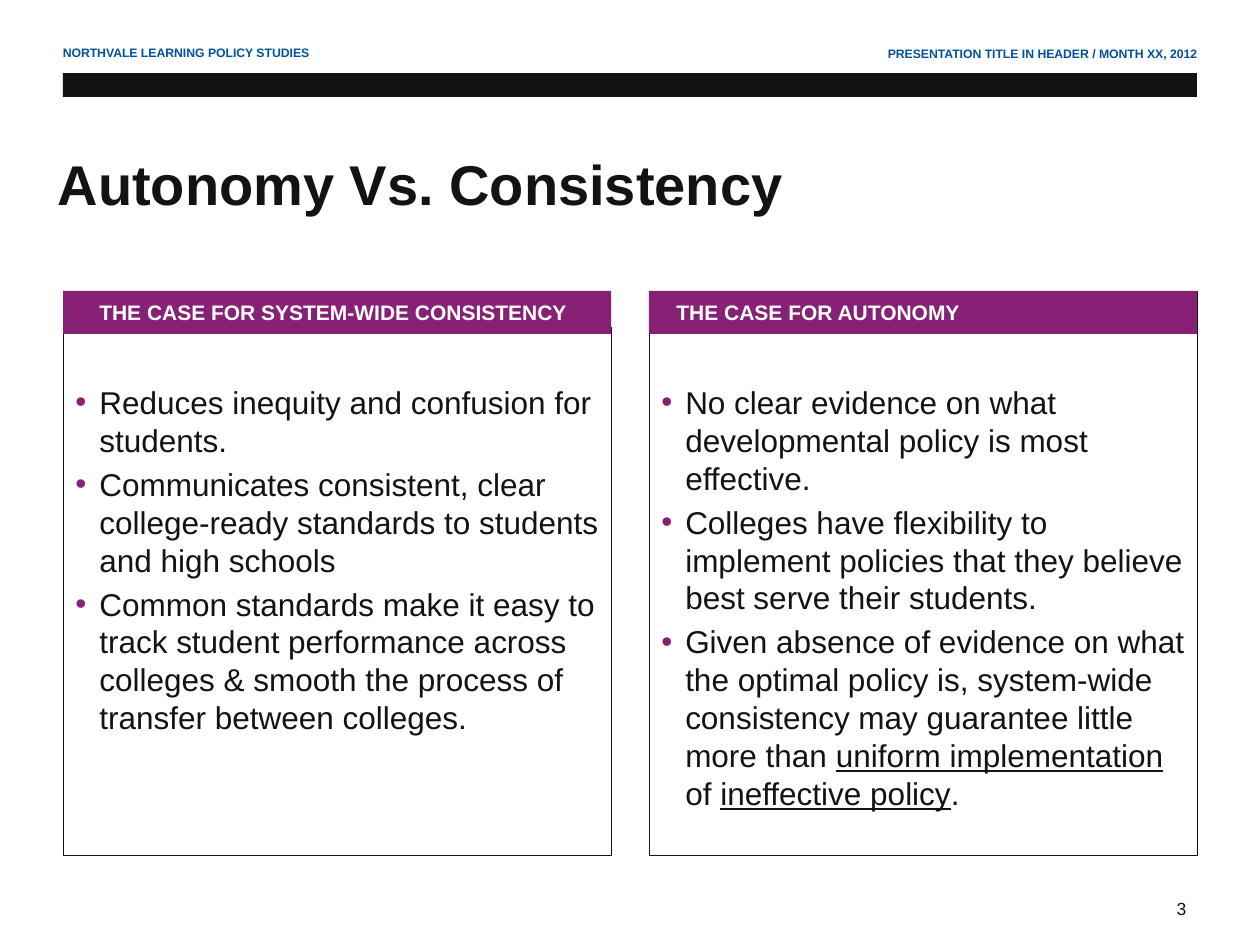
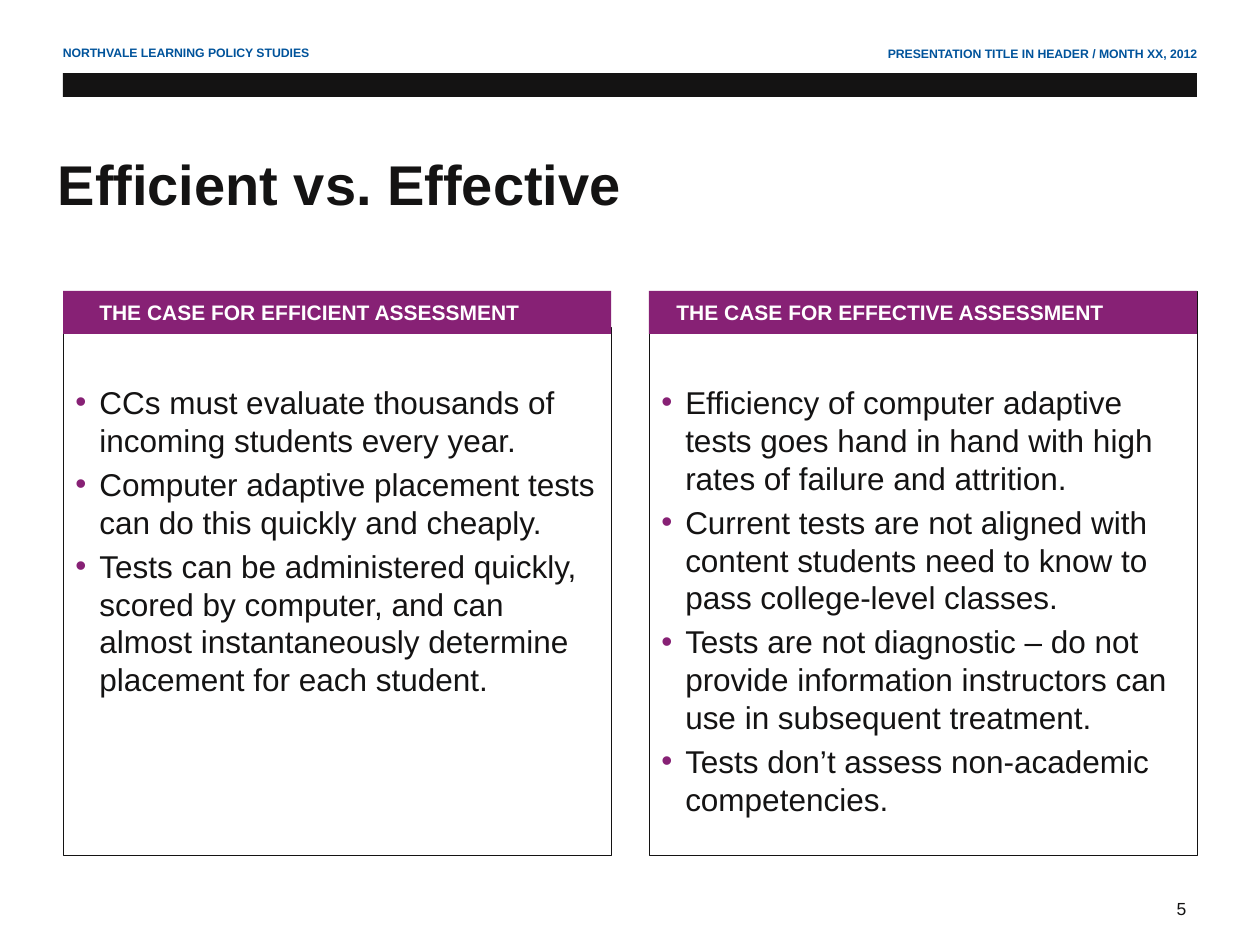
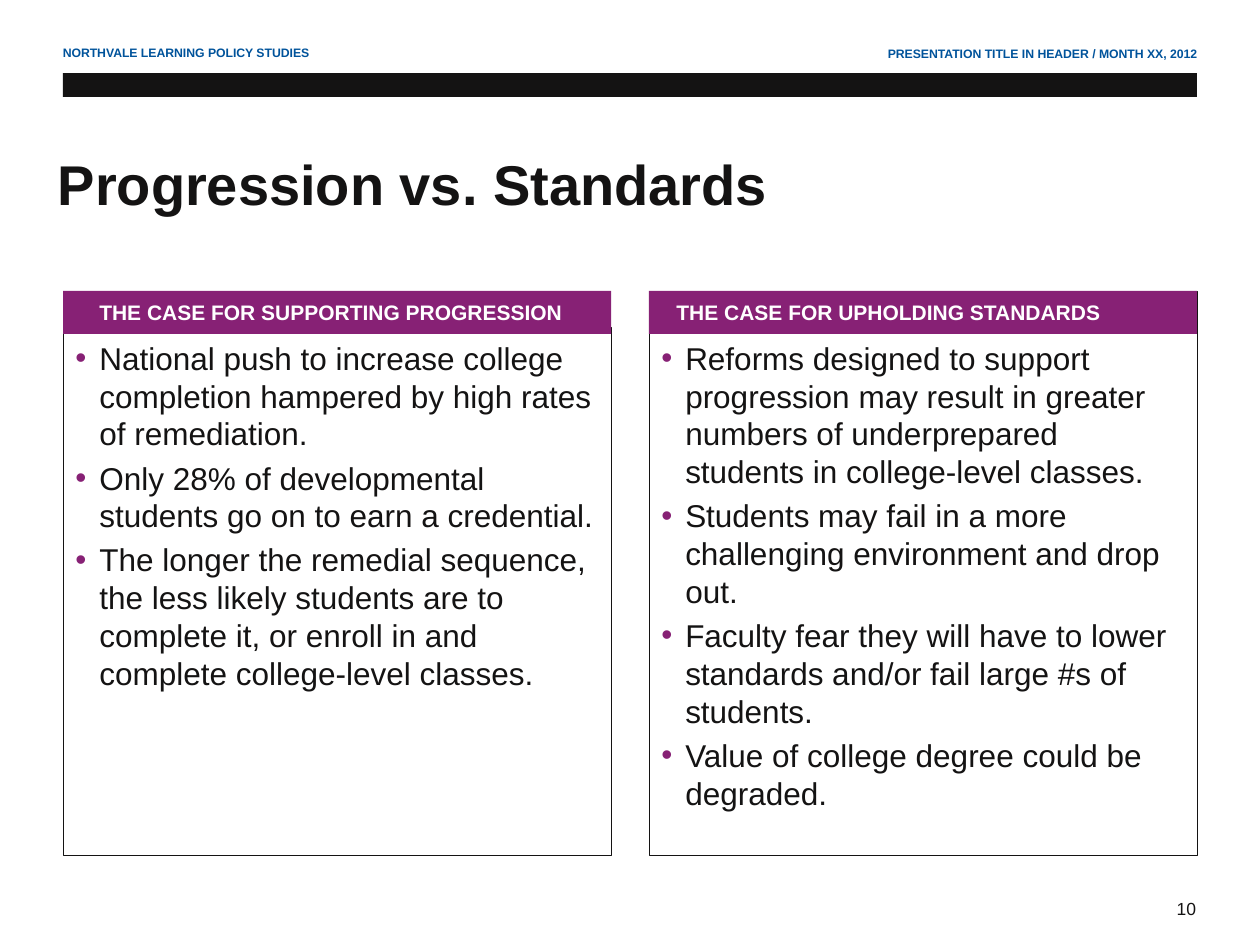
from lxml.etree import SubElement
from pptx import Presentation
from pptx.dml.color import RGBColor
from pptx.enum.shapes import MSO_SHAPE
from pptx.enum.text import MSO_ANCHOR, PP_ALIGN
from pptx.oxml.ns import qn
from pptx.util import Inches, Pt

# Shared style
INK = RGBColor(0x14, 0x13, 0x13)
BLUE = RGBColor(0x00, 0x53, 0x9B)
PURPLE = RGBColor(0x87, 0x21, 0x75)
WHITE = RGBColor(0xFF, 0xFF, 0xFF)
FONT = "Arial"

# Two-column grid, in inches
MARGIN, COLUMN, GUTTER = 0.5, 4.35, 0.3
HEADING_TOP, HEADING_HEIGHT = 2.31, 0.34
BODY_TOP, BODY_HEIGHT = 2.64, 4.15
FRAME_TOPS = (2.6, HEADING_TOP)
FRAME_BOTTOM = 6.79
HEADING_INDENTS = ((0.31, -0.12), (0.38, -0.26))
BULLET_INDENT = 0.19

# Slide content: page number, title, top inset of the lists, columns.
# Words between bars are underlined.
SLIDES = [
    (3, "Autonomy Vs. Consistency", 0.4, [
        ("THE CASE FOR SYSTEM-WIDE CONSISTENCY", [
            "Reduces inequity and confusion for students.",
            "Communicates consistent, clear college-ready standards to students and high schools",
            "Common standards make it easy to track student performance across colleges "
            "& smooth the process of transfer between colleges.",
        ]),
        ("THE CASE FOR AUTONOMY", [
            "No clear evidence on what developmental policy is most effective.",
            "Colleges have flexibility to implement policies that they believe best serve "
            "their students.",
            "Given absence of evidence on what the optimal policy is, system-wide consistency "
            "may guarantee little more than |uniform implementation| of |ineffective policy|.",
        ]),
    ]),
    (5, "Efficient vs. Effective", 0.4, [
        ("THE CASE FOR EFFICIENT ASSESSMENT", [
            "CCs must evaluate thousands of incoming students every year.",
            "Computer adaptive placement tests can do this quickly and cheaply.",
            "Tests can be administered quickly, scored by computer, and can almost "
            "instantaneously determine placement for each student.",
        ]),
        ("THE CASE FOR EFFECTIVE ASSESSMENT", [
            "Efficiency of computer adaptive tests goes hand in hand with high rates of "
            "failure and attrition.",
            "Current tests are not aligned with content students need to know to pass "
            "college-level classes.",
            "Tests are not diagnostic – do not provide information instructors can use in "
            "subsequent treatment.",
            "Tests don’t assess non-academic competencies.",
        ]),
    ]),
    (10, "Progression vs. Standards", 0.05, [
        ("THE CASE FOR SUPPORTING PROGRESSION", [
            "National push to increase college completion hampered by high rates of remediation.",
            "Only 28% of developmental students go on to earn a credential.",
            "The longer the remedial sequence, the less likely students are to complete it, "
            "or enroll in and complete college-level classes.",
        ]),
        ("THE CASE FOR UPHOLDING STANDARDS", [
            "Reforms designed to support progression may result in greater numbers of "
            "underprepared students in college-level classes.",
            "Students may fail in a more challenging environment and drop out.",
            "Faculty fear they will have to lower standards and/or fail large #s of students.",
            "Value of college degree could be degraded.",
        ]),
    ]),
]


def add_box(page, left, top, width, height, fill=None, line=None):
    """Add a rectangle, or a text box when it has neither fill nor line."""
    place = [Inches(length) for length in (left, top, width, height)]
    if fill is None and line is None:
        box = page.shapes.add_textbox(*place)
    else:
        box = page.shapes.add_shape(MSO_SHAPE.RECTANGLE, *place)
        box.shadow.inherit = False
        box.fill.background()
        box.line.fill.background()
    if fill is not None:
        box.fill.solid()
        box.fill.fore_color.rgb = fill
    if line is not None:
        box.line.color.rgb = line
        box.line.width = Pt(0.25)
    box.text_frame.word_wrap = True
    return box


def add_text(box, texts, size, color, bold=False, align=PP_ALIGN.LEFT, indent=(0, 0), bullet=None):
    """Write one paragraph per text, underlining the words between bars."""
    frame = box.text_frame
    for number, text in enumerate(texts):
        para = frame.add_paragraph() if number else frame.paragraphs[0]
        para.alignment = align
        para.space_before = Pt(0.2 * size if number else 0)
        properties = para._p.get_or_add_pPr()
        properties.set("marL", str(Inches(indent[0])))
        properties.set("indent", str(Inches(indent[1])))
        if bullet is not None:
            tint = SubElement(properties, qn("a:buClr"))
            SubElement(tint, qn("a:srgbClr")).set("val", str(bullet))
            SubElement(properties, qn("a:buFont")).set("typeface", FONT)
            SubElement(properties, qn("a:buChar")).set("char", "•")
        for part, words in enumerate(text.split("|")):
            span = para.add_run()
            span.text = words
            span.font.name = FONT
            span.font.size = Pt(size)
            span.font.bold = bold
            span.font.color.rgb = color
            if part % 2:
                span.font.underline = True


deck = Presentation()
deck.slide_width, deck.slide_height = Inches(10), Inches(7.5)

for page_number, title, list_inset, columns in SLIDES:
    page = deck.slides.add_slide(deck.slide_layouts[6])

    # Header, band and page number
    date_box = add_box(page, 6.42, 0.32, 3.18, 0.22)
    add_text(date_box, ["PRESENTATION TITLE IN HEADER / MONTH XX, 2012"], 7, BLUE, True, PP_ALIGN.RIGHT)
    number_box = add_box(page, 9.24, 7.08, 0.46, 0.27)
    add_text(number_box, [str(page_number)], 10, INK)
    add_box(page, MARGIN, 0.58, 2 * COLUMN + GUTTER, 0.19, fill=INK)
    institute_box = add_box(page, 0.4, 0.31, 3.56, 0.22)
    add_text(institute_box, ["NORTHVALE LEARNING POLICY STUDIES"], 7, BLUE, True)

    # Title
    title_box = add_box(page, 0.36, 0.83, 9.01, 1.25)
    title_box.text_frame.vertical_anchor = MSO_ANCHOR.MIDDLE
    add_text(title_box, [title], 32, INK, True)

    # Framed columns with a heading and a bullet list
    for index, (heading, bullets) in enumerate(columns):
        left = MARGIN + index * (COLUMN + GUTTER)
        frame_top = FRAME_TOPS[index]
        add_box(page, left, frame_top, COLUMN, FRAME_BOTTOM - frame_top, line=INK)

        list_box = add_box(page, left, BODY_TOP, COLUMN, BODY_HEIGHT)
        list_box.text_frame.margin_top = Inches(list_inset)
        add_text(list_box, bullets, 18, INK, indent=(BULLET_INDENT, -BULLET_INDENT), bullet=PURPLE)

        heading_box = add_box(page, left, HEADING_TOP, COLUMN, HEADING_HEIGHT, fill=PURPLE)
        heading_box.text_frame.vertical_anchor = MSO_ANCHOR.MIDDLE
        add_text(heading_box, [heading], 12, WHITE, True, indent=HEADING_INDENTS[index])

deck.save("out.pptx")
